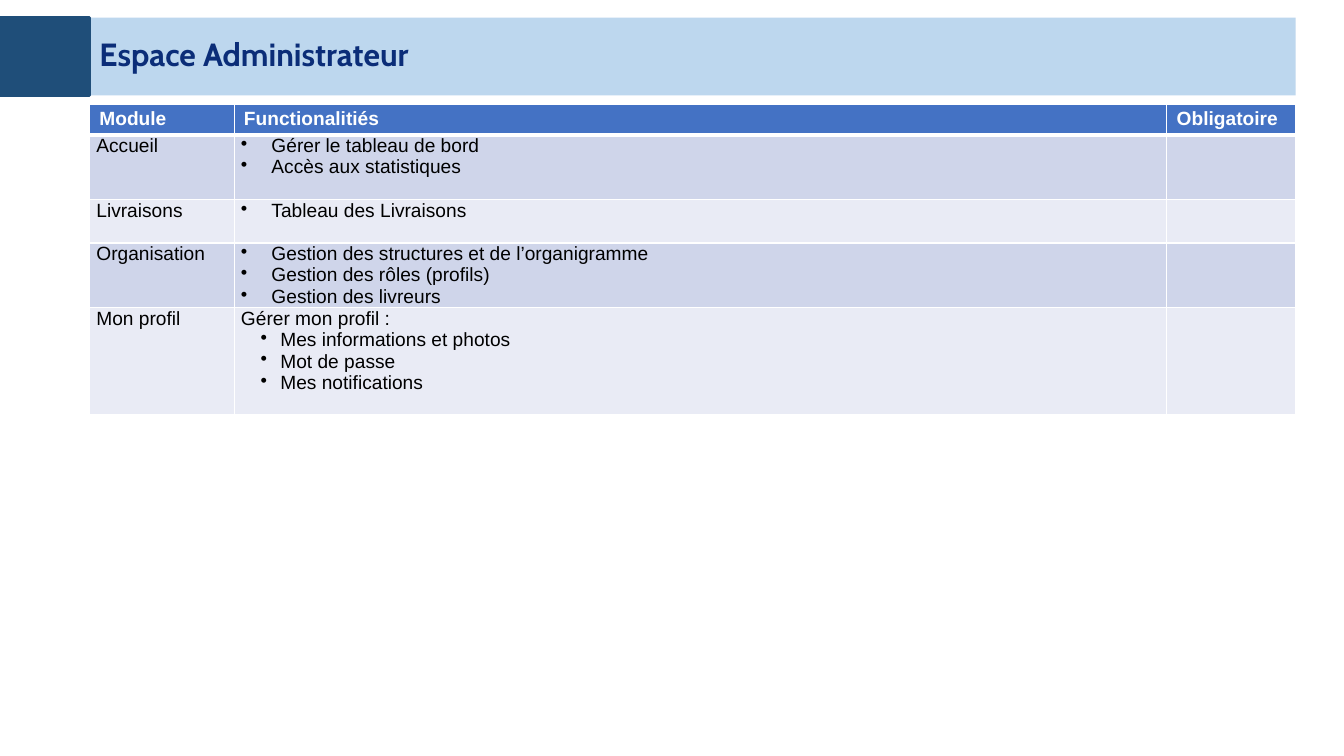
import dataclasses
import typing

import lxml.etree
import pptx
import pptx.dml.color
import pptx.enum.shapes
import pptx.enum.text
import pptx.oxml.ns
import pptx.util

Inches = pptx.util.Inches
Pt = pptx.util.Pt
qn = pptx.oxml.ns.qn

NAVY, SKY, INK = "1F4E79", "BDD7EE", "0B2D78"
WHITE, BLACK = "FFFFFF", "000000"
HEAD_FILL = "4472C4"
BANDS = ("CFD5EA", "E9EBF5")

LEFT, TOP, WIDTH = 0.91, 0.18, 12.26
BAR = 0.79
COLS = (1.47, 9.48, 1.31)
HEADS = ("Module", "Functionalitiés", "Obligatoire")
HEAD_TALL = 0.31

HEAD_BOX = {"margin_left": Inches(0.1), "margin_right": Inches(0.1),
            "margin_top": Inches(0.04), "margin_bottom": Inches(0.04)}
BODY_BOX = {"margin_left": Inches(0.07), "margin_right": Inches(0.07),
            "margin_top": 0, "margin_bottom": 0}
TITLE_BOX = {"margin_left": Inches(0.1), "margin_right": Inches(0.1),
             "margin_top": Inches(0.1), "margin_bottom": Inches(0.1),
             "vertical_anchor": pptx.enum.text.MSO_ANCHOR.MIDDLE,
             "auto_size": pptx.enum.text.MSO_AUTO_SIZE.NONE,
             "word_wrap": True}
TITLE_FONT = {"name": "Cabin", "size": Pt(23.4), "bold": True}
HEAD_FONT = {"name": "Arial", "size": Pt(14), "bold": True}
BODY_FONT = {"name": "Arial", "size": Pt(14), "bold": False}


@dataclasses.dataclass
class Module:
    name: str
    tall: float
    items: tuple[str, ...]
    intro: str = ""
    left: float = 0.31
    hang: float = 0.31


MODULES = (
    Module("Accueil", 0.66, ("Gérer le tableau de bord", "Accès aux statistiques")),
    Module("Livraisons", 0.44, ("Tableau des Livraisons",)),
    Module("Organisation", 0.65, (
        "Gestion des structures et de l’organigramme",
        "Gestion des rôles (profils)",
        "Gestion des livreurs")),
    Module("Mon profil", 1.09,
           ("Mes informations et photos", "Mot de passe", "Mes notifications"),
           "Gérer mon profil :", 0.4, 0.2),
)


def rgb(code: str) -> pptx.dml.color.RGBColor:
    return pptx.dml.color.RGBColor.from_string(code)


def apply(item: typing.Any, form: dict[str, typing.Any]) -> None:
    for key, value in form.items():
        setattr(item, key, value)


def paint(item: typing.Any, code: str) -> None:
    item.fill.solid()
    item.fill.fore_color.rgb = rgb(code)


def write(para: typing.Any, text: str, form: dict[str, typing.Any], code: str) -> None:
    run = para.add_run()
    run.text = text
    apply(run.font, form)
    run.font.color.rgb = rgb(code)


def bullet(para: typing.Any, left: float, hang: float) -> None:
    prop = para._p.get_or_add_pPr()
    prop.set("marL", str(Inches(left)))
    prop.set("indent", str(-Inches(hang)))
    tint = lxml.etree.SubElement(prop, qn("a:buClr"))
    lxml.etree.SubElement(tint, qn("a:srgbClr"), val=BLACK)
    lxml.etree.SubElement(prop, qn("a:buChar"), char="•")


def edge(cell: typing.Any, base: float) -> None:
    """Draw white borders; base is the width of the lower one."""
    prop = cell._tc.get_or_add_tcPr()
    for side, size in (("L", 1), ("R", 1), ("T", 1), ("B", base)):
        line = lxml.etree.SubElement(prop, qn(f"a:ln{side}"), w=str(Pt(size)))
        fill = lxml.etree.SubElement(line, qn("a:solidFill"))
        lxml.etree.SubElement(fill, qn("a:srgbClr"), val=WHITE)


def add_bar(slide: typing.Any) -> None:
    block = slide.shapes.add_shape(
        pptx.enum.shapes.MSO_SHAPE.RECTANGLE,
        0, Inches(TOP), Inches(LEFT), Inches(BAR))
    block.shadow.inherit = False
    paint(block, NAVY)
    block.line.color.rgb = rgb(NAVY)
    block.line.width = Pt(2)

    title = slide.shapes.title
    apply(title, {"left": Inches(LEFT), "top": Inches(TOP),
                  "width": Inches(WIDTH), "height": Inches(BAR)})
    paint(title, SKY)
    apply(title.text_frame, TITLE_BOX)
    para = title.text_frame.paragraphs[0]
    apply(para, {"alignment": pptx.enum.text.PP_ALIGN.LEFT, "line_spacing": 0.9})
    write(para, "Espace Administrateur", TITLE_FONT, INK)


def fill_row(cells: typing.Any, module: Module) -> None:
    write(cells[0].text_frame.paragraphs[0], module.name, BODY_FONT, BLACK)
    frame = cells[1].text_frame
    lines = ((module.intro,) if module.intro else ()) + module.items
    for index, text in enumerate(lines):
        para = frame.add_paragraph() if index else frame.paragraphs[0]
        if text != module.intro:
            bullet(para, module.left, module.hang)
        write(para, text, BODY_FONT, BLACK)


def add_grid(slide: typing.Any) -> None:
    talls = (HEAD_TALL, *(module.tall for module in MODULES))
    table = slide.shapes.add_table(
        len(talls), len(COLS), Inches(LEFT), Inches(1.06),
        Inches(WIDTH), Inches(sum(talls))).table
    for column, wide in zip(table.columns, COLS):
        column.width = Inches(wide)
    for index, (row, tall) in enumerate(zip(table.rows, talls)):
        row.height = Inches(tall)
        for cell in row.cells:
            edge(cell, 1 if index else 3)
            paint(cell, BANDS[(index - 1) % 2] if index else HEAD_FILL)
            apply(cell, BODY_BOX if index else HEAD_BOX)
    for cell, text in zip(table.rows[0].cells, HEADS):
        write(cell.text_frame.paragraphs[0], text, HEAD_FONT, WHITE)
    for index, module in enumerate(MODULES, 1):
        fill_row(table.rows[index].cells, module)


def main() -> None:
    deck = pptx.Presentation()
    apply(deck, {"slide_width": Inches(13.66), "slide_height": Inches(7.68)})
    slide = deck.slides.add_slide(deck.slide_layouts[5])
    add_bar(slide)
    add_grid(slide)
    deck.save("out.pptx")


if __name__ == "__main__":
    main()
